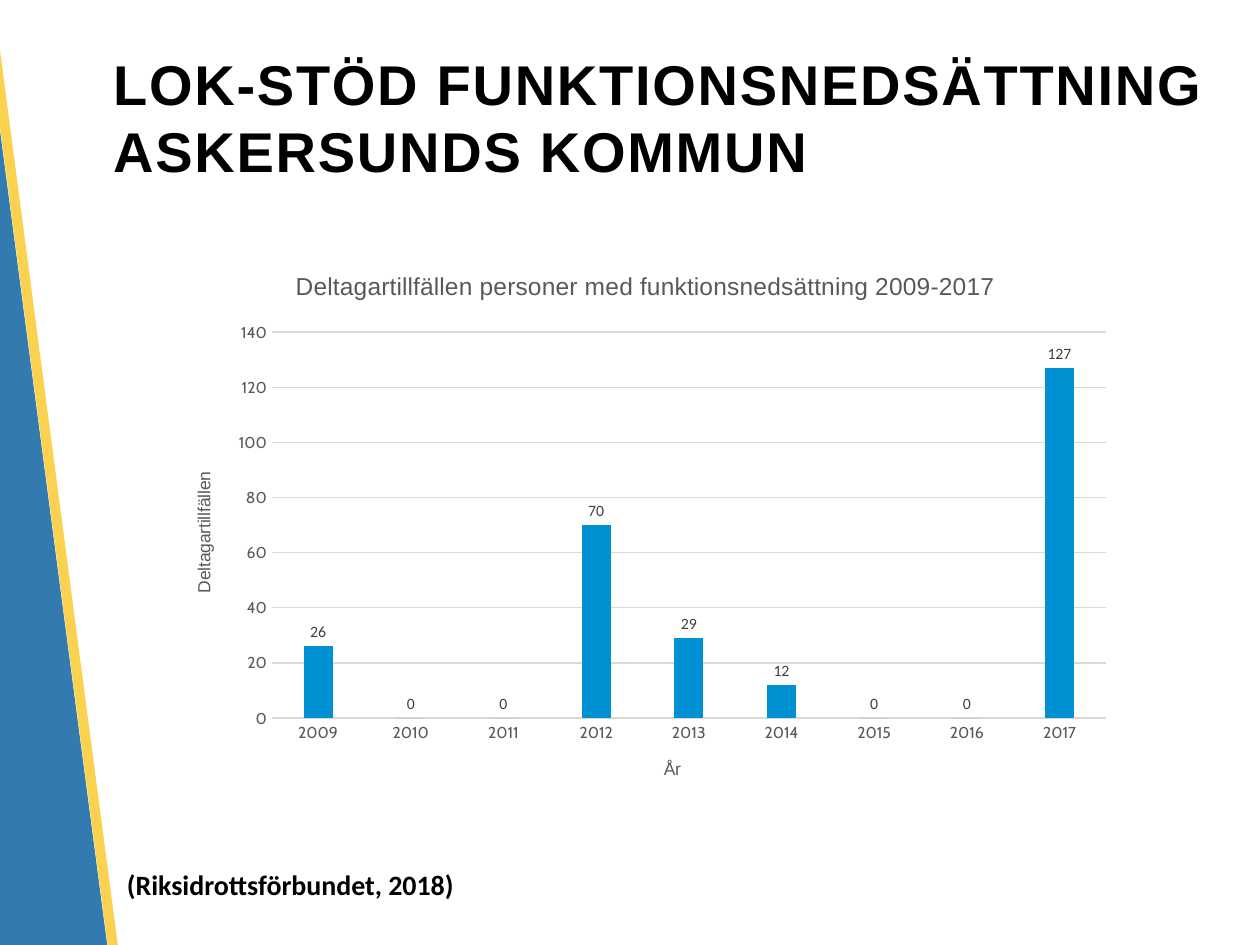
from pptx import Presentation
from pptx.chart.data import CategoryChartData
from pptx.dml.color import RGBColor
from pptx.enum import chart as ch, shapes, text
from pptx.oxml import parse_xml
from pptx.oxml.ns import nsdecls, qn
from pptx.util import Inches, Pt

GREY = "595959"
RULE = "D9D9D9"
YEARS = [str(year) for year in range(2009, 2018)]
COUNTS = [26, 0, 0, 70, 29, 12, 0, 0, 127]


def paint(fmt, color):
    """Give a fill one solid colour."""
    fmt.solid()
    fmt.fore_color.rgb = RGBColor.from_string(color)


def style(font, name, size, color, bold=False):
    font.name, font.size, font.bold = name, Pt(size), bold
    font.color.rgb = RGBColor.from_string(color)


def rule(line):
    paint(line.fill, RULE)
    line.width = Pt(0.75)


def add_band(slide, box, color, alpha):
    """Add a tilted, partly transparent stripe."""
    band = slide.shapes.add_shape(shapes.MSO_SHAPE.RECTANGLE, *map(Inches, box))
    band.rotation = 352.5
    band.shadow.inherit = False
    band.line.fill.background()
    paint(band.fill, color)
    tint = band.fill._xPr.find(".//" + qn("a:srgbClr"))
    tint.append(parse_xml(f'<a:alpha {nsdecls("a")} val="{alpha * 1000}"/>'))


def add_text(slide, box, words, name, size, wrap, anchor, gap=0):
    """Add bold black text; gap is the letter spacing in points."""
    frame = slide.shapes.add_textbox(*map(Inches, box)).text_frame
    frame.word_wrap = wrap
    frame.vertical_anchor = anchor
    run = frame.paragraphs[0].add_run()
    run.text = words
    style(run.font, name, size, "000000", True)
    if gap:
        run.font._element.set("spc", str(gap * 100))


def set_title(owner, words, size):
    """Title a chart or an axis."""
    run = owner.text_frame.paragraphs[0].add_run()
    run.text = words
    style(run.font, "Arial", size, GREY)


def set_axis(axis, title):
    axis.major_tick_mark = axis.minor_tick_mark = ch.XL_TICK_MARK.NONE
    style(axis.tick_labels.font, "Cabin", 9, GREY)
    set_title(axis.axis_title, title, 10)


def place_plot(chart, x, y, w, h):
    """Fix the inner plot area as fractions of the chart."""
    area = chart._chartSpace.chart.plotArea
    for old in area.findall(qn("c:layout")):
        area.remove(old)
    sizes = "".join(f'<c:{tag} val="{val}"/>'
                    for tag, val in zip("xywh", (x, y, w, h)))
    area.insert(0, parse_xml(
        f'<c:layout {nsdecls("c")}><c:manualLayout>'
        '<c:layoutTarget val="inner"/><c:xMode val="edge"/><c:yMode val="edge"/>'
        f'{sizes}</c:manualLayout></c:layout>'))


def add_bars(slide, box):
    data = CategoryChartData()
    data.categories = YEARS
    data.add_series("Series 1", COUNTS)
    chart = slide.shapes.add_chart(
        ch.XL_CHART_TYPE.COLUMN_CLUSTERED, *map(Inches, box), data).chart
    style(chart.font, "Calibri", 10, "000000")
    chart.has_legend = False
    set_title(chart.chart_title,
              "Deltagartillfällen personer med funktionsnedsättning 2009-2017", 14)

    set_axis(chart.category_axis, "År")
    rule(chart.category_axis.format.line)
    scale = chart.value_axis
    set_axis(scale, "Deltagartillfällen")
    scale.minimum_scale, scale.maximum_scale, scale.major_unit = 0, 140, 20
    scale.format.line.fill.background()
    rule(scale.major_gridlines.format.line)

    plot = chart.plots[0]
    plot.vary_by_categories = False
    plot.gap_width, plot.overlap = 219, -27
    bars = plot.series[0]
    bars.invert_if_negative = False
    paint(bars.format.fill, "0090D4")
    labels = bars.data_labels
    labels.show_value = True
    labels.position = ch.XL_LABEL_POSITION.OUTSIDE_END
    style(labels.font, "Calibri", 9, "404040")
    place_plot(chart, 0.11, 0.15, 0.87, 0.69)


def main():
    deck = Presentation()
    deck.slide_width, deck.slide_height = Inches(10), Inches(7.5)
    slide = deck.slides.add_slide(deck.slide_layouts[6])
    paint(slide.background.fill, "FFFFFF")
    add_band(slide, (-0.52, -1.64, 0.91, 11.33), "005B9C", 80)
    add_band(slide, (0.38, -1.77, 0.08, 11.32), "FAC828", 81)
    add_text(slide, (0.8, 0.3, 9.2, 1.25),
             "LOK-STÖD FUNKTIONSNEDSÄTTNING ASKERSUNDS KOMMUN",
             "Arial", 32, True, text.MSO_ANCHOR.MIDDLE, 1)
    add_text(slide, (0.91, 6.84, 2.84, 0.37), "(Riksidrottsförbundet, 2018)",
             "Calibri", 16, False, text.MSO_ANCHOR.TOP)
    add_bars(slide, (1.32, 1.97, 7.61, 4.44))
    deck.save("out.pptx")


if __name__ == "__main__":
    main()
